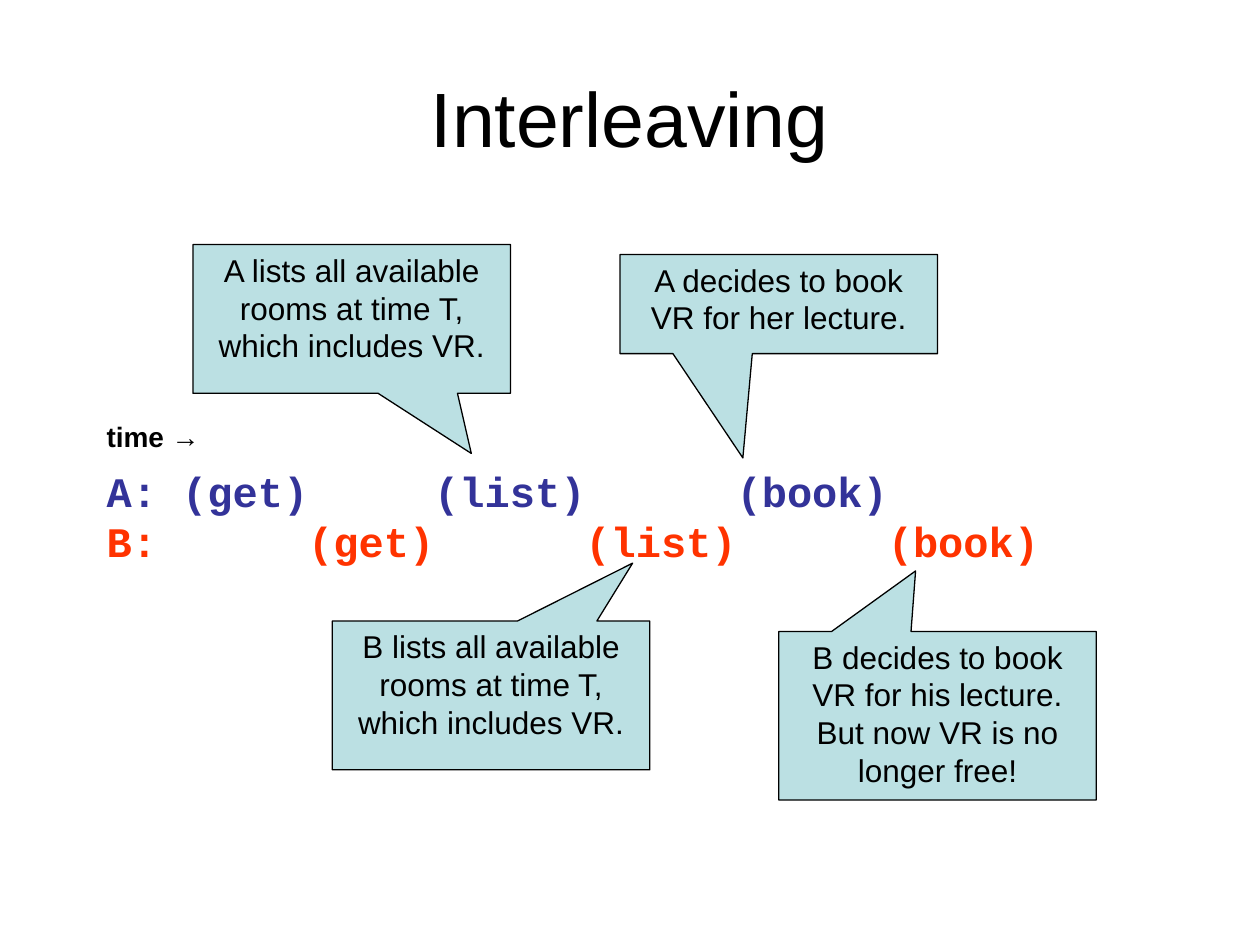
from dataclasses import dataclass

from lxml import etree
from pptx import Presentation
from pptx.dml.color import RGBColor
from pptx.enum.shapes import MSO_SHAPE
from pptx.enum.text import MSO_ANCHOR, PP_ALIGN
from pptx.oxml.ns import qn
from pptx.util import Cm, Pt

CALLOUT = MSO_SHAPE.RECTANGULAR_CALLOUT
TOP, MIDDLE = MSO_ANCHOR.TOP, MSO_ANCHOR.MIDDLE
LEFT, CENTER = PP_ALIGN.LEFT, PP_ALIGN.CENTER


@dataclass(frozen=True)
class Theme:
    ink: RGBColor = RGBColor(0x00, 0x00, 0x00)
    note: RGBColor = RGBColor(0xBB, 0xE0, 0xE3)
    user_a: RGBColor = RGBColor(0x33, 0x33, 0x99)
    user_b: RGBColor = RGBColor(0xFF, 0x33, 0x00)
    sans: str = "Arial"
    mono: str = "Courier New"
    title: int = 44
    lane: int = 24
    body: int = 18
    label: int = 16


THEME = Theme()
CHAR = 0.508  # width in cm of one monospaced letter at the lane size
CALL_W = 6.4

# Each step is a column, counted in letters, and its word
LANES = [
    ("A:", THEME.user_a, [(3, "(get)"), (13, "(list)"), (25, "(book)")]),
    ("B:", THEME.user_b, [(8, "(get)"), (19, "(list)"), (31, "(book)")]),
]

# Left, top, height; pointer tip; text
NOTES = [
    ((3.89, 4.93, 3.0), (0.377, 0.904),
     "A lists all available rooms at time T, which includes VR."),
    ((6.7, 12.52, 3.0), (0.446, -0.889),
     "B lists all available rooms at time T, which includes VR."),
    ((12.5, 5.13, 2.0), (-0.113, 1.551),
     "A decides to book VR for her lecture."),
    ((15.7, 12.73, 3.4), (-0.069, -0.859),
     "B decides to book VR for his lecture. But now VR is no longer free!"),
]


def write(para, text, align=LEFT, **style):
    para.alignment = align
    run = para.add_run()
    run.text = text
    look = {"name": THEME.sans, "bold": False, **style}
    color = look.pop("color", THEME.ink)
    for key, value in look.items():
        setattr(run.font, key, value)
    run.font.color.rgb = color


def add_box(slide, box, anchor=TOP):
    frame = slide.shapes.add_textbox(*map(Cm, box)).text_frame
    frame.word_wrap = True
    frame.vertical_anchor = anchor
    return frame


def add_title(slide, box, text):
    frame = add_box(slide, box, MIDDLE)
    write(frame.paragraphs[0], text, CENTER, size=Pt(THEME.title))


def set_tabs(para, stops):
    tabs = etree.SubElement(para._p.get_or_add_pPr(), qn("a:tabLst"))
    for stop in stops:
        etree.SubElement(tabs, qn("a:tab"), pos=str(Cm(stop)), algn="l")


def add_lanes(slide, box):
    """Time label above one line of steps for each user."""
    left, top, width, height = box
    label = add_box(slide, (left, top, 4.19, 0.94))
    write(label.paragraphs[0], "time →", size=Pt(THEME.label), bold=True)

    frame = add_box(slide, (left, top + 0.79, width, height - 0.79))
    frame.margin_top = Cm(0.25)
    for i, (user, color, steps) in enumerate(LANES):
        para = frame.add_paragraph() if i else frame.paragraphs[0]
        para.line_spacing = Pt(29)
        set_tabs(para, [col * CHAR for col, _ in steps])
        write(para, "\t".join([user, *(word for _, word in steps)]),
              name=THEME.mono, size=Pt(THEME.lane), bold=True, color=color)


def add_note(slide, box, tip, text):
    note = slide.shapes.add_shape(CALLOUT, *map(Cm, box))
    note.shadow.inherit = False
    note.fill.solid()
    note.fill.fore_color.rgb = THEME.note
    note.line.color.rgb = THEME.ink
    note.line.width = Pt(0.75)
    for i, value in enumerate(tip):
        note.adjustments[i] = value
    frame = note.text_frame
    frame.word_wrap = True
    frame.vertical_anchor = TOP
    write(frame.paragraphs[0], text, CENTER, size=Pt(THEME.body))


def main():
    deck = Presentation()
    deck.slide_width, deck.slide_height = Cm(25.4), Cm(19.05)
    slide = deck.slides.add_slide(deck.slide_layouts[6])
    add_title(slide, (1.27, 0.76, 22.86, 3.18), "Interleaving")
    add_lanes(slide, (1.9, 8.33, 21.8, 3.08))
    for (left, top, height), tip, text in NOTES:
        add_note(slide, (left, top, CALL_W, height), tip, text)
    deck.save("out.pptx")


if __name__ == "__main__":
    main()
